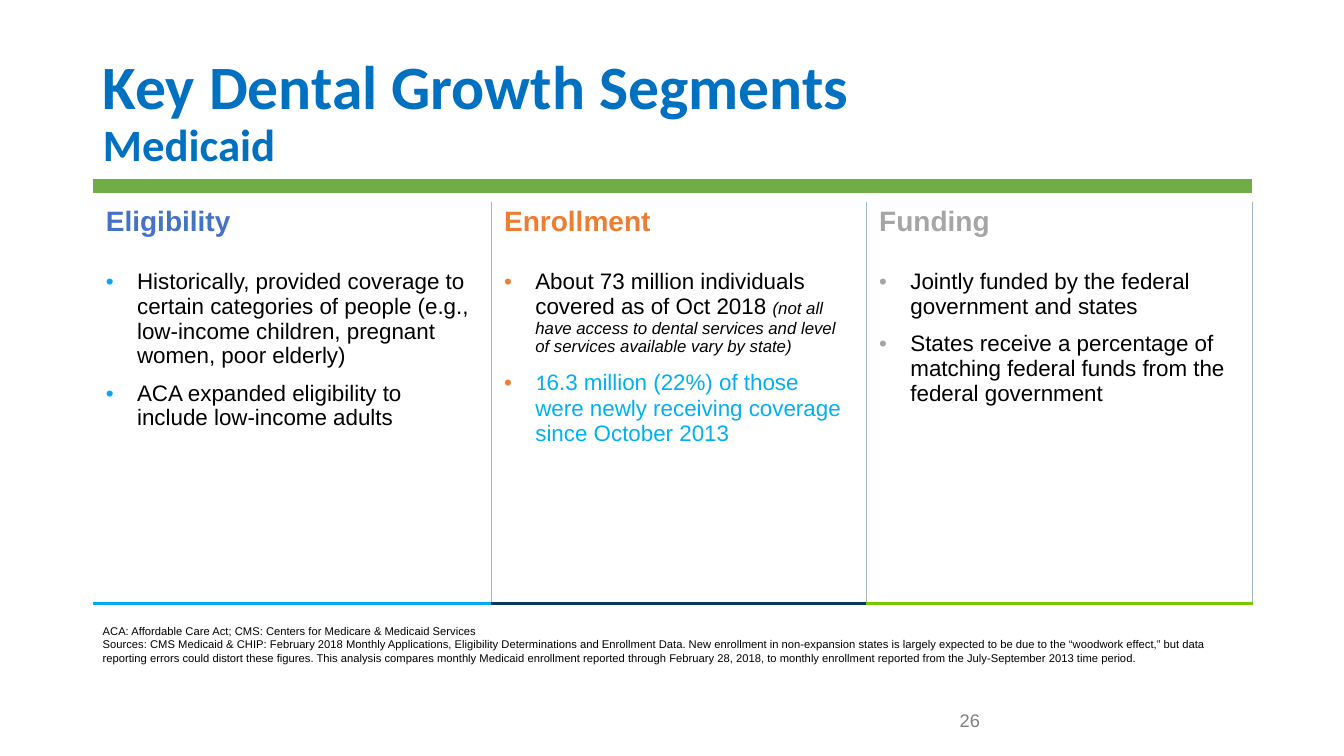
from lxml import etree
from pptx import Presentation
from pptx.dml.color import RGBColor
from pptx.enum.shapes import MSO_CONNECTOR as Link
from pptx.enum.text import MSO_ANCHOR as Anchor, PP_ALIGN as Align
from pptx.oxml import parse_xml
from pptx.oxml.ns import nsdecls, qn
from pptx.util import Inches, Pt

LEFT, WIDE = 0.92, 11.5
BLACK, SKY, RULE = "000000", "00B0F0", "A3B7C1"
WIDTHS = [3.95, 3.72, 3.83]
HEIGHTS = [0.62, 3.37]
SEGMENTS = [
    ("Eligibility", "4472C4", "00A9F6", "00A9F6", [
        [("Historically, provided coverage to certain categories of people "
          "(e.g., low-income children, pregnant women, poor elderly)", {})],
        [("ACA expanded eligibility to include low-income adults", {})]]),
    ("Enrollment", "ED7D31", "ED7D31", "073857", [
        [("About 73 million individuals covered as of Oct 2018 ", {}),
         ("(not all have access to dental services and level of services "
          "available vary by state)", {"size": 12, "italic": True})],
        [("1", {"face": "Calibri", "tint": SKY}),
         ("6.3 million (22%) of those were newly receiving coverage since "
          "October 2013", {"tint": SKY})]]),
    ("Funding", "A5A5A5", "A5A5A5", "74C800", [
        [("Jointly funded by the federal government and states", {})],
        [("States receive a percentage of matching federal funds from the "
          "federal government", {})]]),
]
NOTES = [
    "ACA: Affordable Care Act; CMS: Centers for Medicare & Medicaid Services",
    "Sources: CMS Medicaid & CHIP: February 2018 Monthly Applications, "
    "Eligibility Determinations and Enrollment Data. New enrollment in "
    "non-expansion states is largely expected to be due to the “woodwork "
    "effect,” but data reporting errors could distort these figures. This "
    "analysis compares monthly Medicaid enrollment reported through February "
    "28, 2018, to monthly enrollment reported from the July-September 2013 "
    "time period.",
]


def color(code):
    """Turn a hex string into a colour."""
    return RGBColor.from_string(code)


def add_run(para, text, size=16, tint=BLACK, face="Arial", bold=False, italic=False):
    """Add one styled run to a paragraph."""
    run = para.add_run()
    run.text = text
    font = run.font
    font.size, font.name, font.bold, font.italic = Pt(size), face, bold, italic
    font.color.rgb = color(tint)


def set_bullet(para, tint):
    """Give a paragraph a hanging, coloured bullet."""
    props = para._p.get_or_add_pPr()
    props.set("marL", str(Inches(0.31)))
    props.set("indent", str(Inches(-0.31)))
    for body in (
        f'<a:buClr {nsdecls("a")}><a:srgbClr val="{tint}"/></a:buClr>',
        f'<a:buFont {nsdecls("a")} typeface="Arial"/>',
        f'<a:buChar {nsdecls("a")} char="•"/>',
    ):
        props.append(parse_xml(body))
    para.space_after = Pt(8.8)


def set_edges(cell, edges):
    """Draw the listed cell edges and clear the others."""
    props = cell._tc.get_or_add_tcPr()
    for side in "LRTB":
        line = etree.SubElement(props, qn(f"a:ln{side}"))
        if side in edges:
            tint, size = edges[side]
            line.set("w", str(Pt(size)))
            fill = etree.SubElement(line, qn("a:solidFill"))
            etree.SubElement(fill, qn("a:srgbClr")).set("val", tint)
        else:
            etree.SubElement(line, qn("a:noFill"))


def add_title(slide, left, top, width, height):
    """Place the two-line title and the bar along its foot."""
    title = slide.shapes.title
    title.left, title.top = Inches(left), Inches(top)
    title.width, title.height = Inches(width), Inches(height)
    frame = title.text_frame
    frame.word_wrap, frame.vertical_anchor = True, Anchor.MIDDLE
    para = frame.paragraphs[0]
    para.alignment, para.line_spacing = Align.LEFT, 0.9
    add_run(para, "Key Dental Growth Segments", 44, "0070C0", "Calibri", True)
    para.add_line_break()
    add_run(para, "Medicaid", 32, "0070C0", "Calibri", True)
    foot = Inches(top + height)
    bar = slide.shapes.add_connector(
        Link.STRAIGHT, Inches(left), foot, Inches(left + width), foot)
    bar.line.color.rgb, bar.line.width = color("70AD47"), Pt(10)
    etree.SubElement(bar._element.spPr, qn("a:effectLst"))


def add_segments(slide, left, top, width, height):
    """Place the table with one column per segment."""
    table = slide.shapes.add_table(
        len(HEIGHTS), len(SEGMENTS), Inches(left), Inches(top),
        Inches(width), Inches(height)).table
    table.first_row = table.horz_banding = False
    for row, size in zip(table.rows, HEIGHTS):
        row.height = Inches(size)
    for col, (name, tint, dot, base, points) in enumerate(SEGMENTS):
        table.columns[col].width = Inches(WIDTHS[col])
        sides = {"R": (RULE, 0.5)}
        if col:
            sides["L"] = (RULE, 0.5)
        head, body = table.cell(0, col), table.cell(1, col)
        for cell, edges in ((head, sides), (body, {**sides, "B": (base, 2.25)})):
            set_edges(cell, edges)
            cell.fill.background()
            cell.margin_left = cell.margin_right = Inches(0.13)
            cell.margin_top = cell.margin_bottom = Inches(0.05)
        add_run(head.text_frame.paragraphs[0], name, 20, tint, bold=True)
        frame = body.text_frame
        for item, runs in enumerate(points):
            para = frame.add_paragraph() if item else frame.paragraphs[0]
            set_bullet(para, dot)
            for text, style in runs:
                add_run(para, text, **style)


def add_text(slide, left, top, width, height, lines, size, tint, anchor):
    """Place a wrapped text box with one paragraph per line."""
    box = slide.shapes.add_textbox(
        Inches(left), Inches(top), Inches(width), Inches(height))
    frame = box.text_frame
    frame.word_wrap, frame.vertical_anchor = True, anchor
    for item, text in enumerate(lines):
        para = frame.add_paragraph() if item else frame.paragraphs[0]
        add_run(para, text, size, tint)


def main():
    """Build and save the slide."""
    deck = Presentation()
    deck.slide_width, deck.slide_height = Inches(13.33), Inches(7.5)
    slide = deck.slides.add_slide(deck.slide_layouts[5])
    add_title(slide, LEFT, 0.4, WIDE, 1.45)
    add_segments(slide, LEFT, 2, WIDE, sum(HEIGHTS))
    add_text(slide, 9.42, 6.95, 3, 0.4, ["26"], 13, "808080", Anchor.MIDDLE)
    add_text(slide, LEFT, 6.09, WIDE, 0.55, NOTES, 8, BLACK, Anchor.BOTTOM)
    deck.save("out.pptx")


if __name__ == "__main__":
    main()
